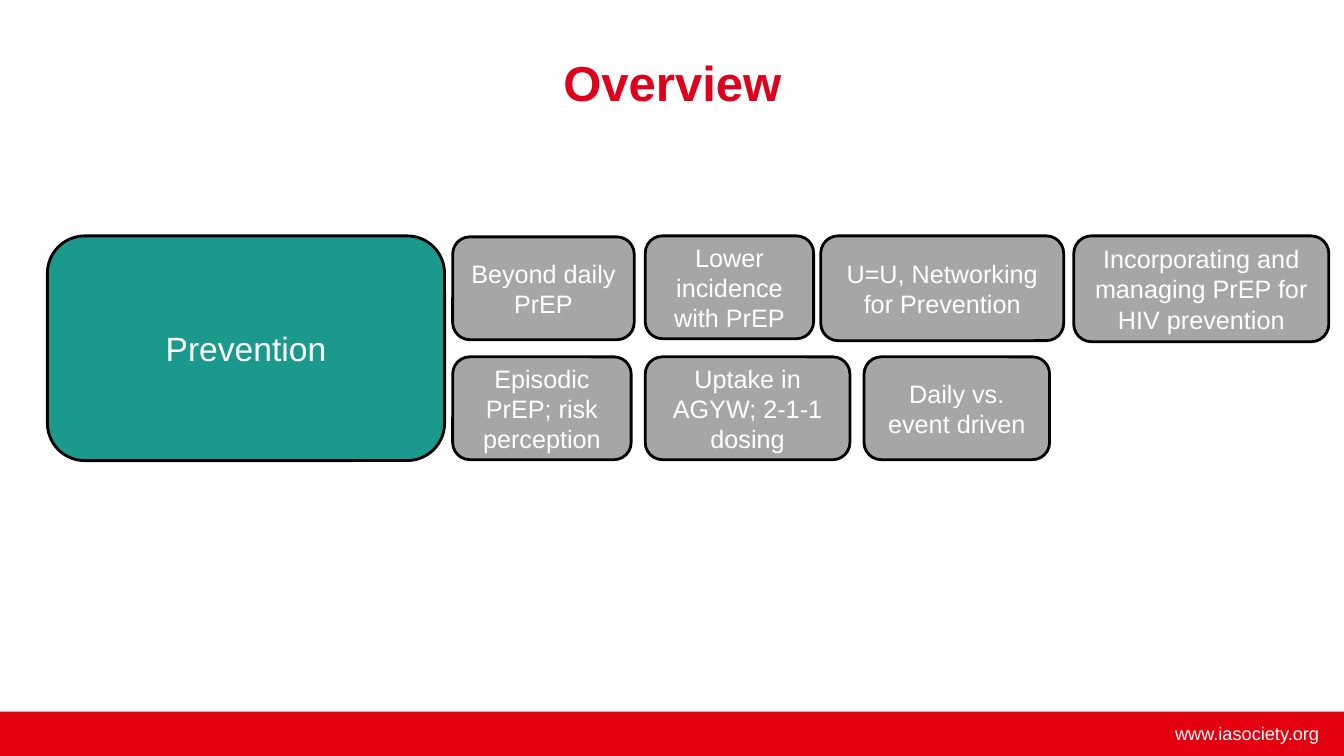
from pptx import Presentation
from pptx.dml.color import RGBColor
from pptx.enum.shapes import MSO_SHAPE
from pptx.enum.text import MSO_ANCHOR, MSO_AUTO_SIZE, PP_ALIGN
from pptx.util import Inches, Pt

RECT, ROUND = MSO_SHAPE.RECTANGLE, MSO_SHAPE.ROUNDED_RECTANGLE
MIDDLE = MSO_ANCHOR.MIDDLE
CENTER, RIGHT = PP_ALIGN.CENTER, PP_ALIGN.RIGHT
COLORS = {k: RGBColor.from_string(v) for k, v in {
    "title": "E0001B", "footer": "E3000F", "theme": "1A998C",
    "topic": "A6A6A6", "outline": "000000", "text": "FFFFFF"}.items()}


def write(shape, text, size, color="text", align=CENTER, bold=False):
    tf = shape.text_frame
    tf.word_wrap = True
    tf.auto_size = MSO_AUTO_SIZE.NONE
    tf.vertical_anchor = MIDDLE
    p = tf.paragraphs[0]
    p.alignment = align
    r = p.add_run()
    r.text = text
    r.font.name = "Arial"
    r.font.size = Pt(size)
    r.font.bold = bold
    r.font.color.rgb = COLORS[color]


def add_box(kind, left, top, width, height, fill, outlined=True):
    sp = s.shapes.add_shape(kind, Inches(left), Inches(top), Inches(width), Inches(height))
    sp.shadow.inherit = False
    sp.fill.solid()
    sp.fill.fore_color.rgb = COLORS[fill]
    if outlined:
        sp.line.color.rgb = COLORS["outline"]
        sp.line.width = Pt(2)
    else:
        sp.line.fill.background()
    return sp


prs = Presentation()
prs.slide_width, prs.slide_height = Inches(13.33), Inches(7.5)
s = prs.slides.add_slide(prs.slide_layouts[5])

# Footer
add_box(RECT, 0, 7.06, 13.33, 0.44, "footer", outlined=False)
address = s.shapes.add_textbox(Inches(10.43), Inches(7.11), Inches(2.75), Inches(0.32))
write(address, "www.iasociety.org", 13, align=RIGHT)

# Title
title = s.shapes.title
title.left, title.top = Inches(1.67), Inches(0)
title.width, title.height = Inches(10), Inches(1.62)
write(title, "Overview", 35, "title", bold=True)

# Theme and its topics
write(add_box(ROUND, 0.47, 2.34, 3.94, 2.23, "theme"), "Prevention", 24)

topics = [
    (4.49, 2.35, 1.8, 1.02, "Beyond daily PrEP"),
    (6.4, 2.34, 1.67, 1.02, "Lower incidence with PrEP"),
    (8.14, 2.34, 2.41, 1.04, "U=U, Networking for Prevention"),
    (10.65, 2.34, 2.53, 1.05, "Incorporating and managing PrEP for HIV prevention"),
    (4.49, 3.54, 1.77, 1.02, "Episodic PrEP; risk perception"),
    (6.4, 3.54, 2.03, 1.02, "Uptake in AGYW; 2-1-1 dosing"),
    (8.57, 3.54, 1.84, 1.02, "Daily vs. event driven"),
]
for left, top, width, height, text in topics:
    write(add_box(ROUND, left, top, width, height, "topic"), text, 18)

prs.save("out.pptx")
